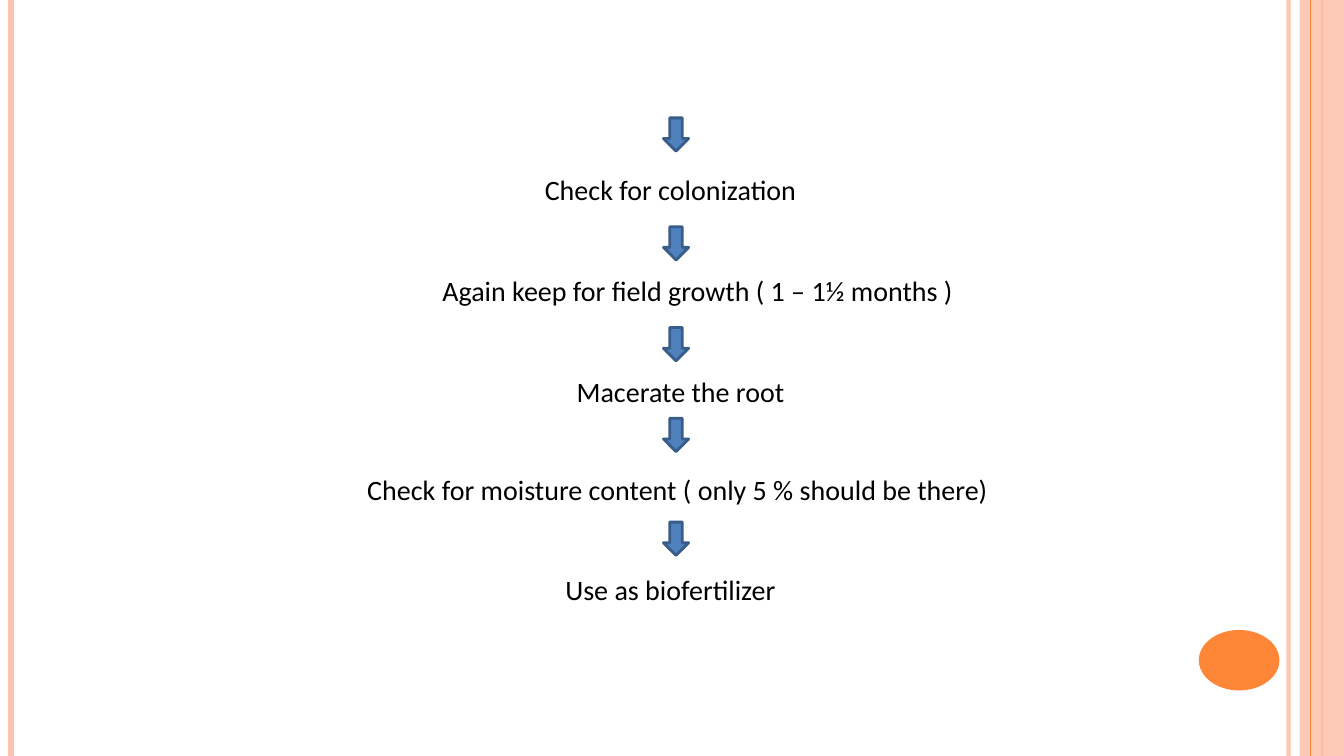
import lxml.etree
import pptx
import pptx.dml.color
import pptx.enum.shapes
import pptx.enum.text
import pptx.oxml.ns
import pptx.util

Inches = pptx.util.Inches
Pt = pptx.util.Pt
qn = pptx.oxml.ns.qn
SHAPE = pptx.enum.shapes.MSO_SHAPE

SLIDE_WIDTH, SLIDE_HEIGHT = 13.33, 7.5
COLORS = {
    "peach": "FEC3AE",
    "orange": "FE8637",
    "arrow": "4F81BC",
    "arrow_edge": "385D89",
    "text": "000000",
}
STEPS = [
    ("Check for colonization", 6.65, 1.88),
    ("Again keep for field growth ( 1 – 1½ months )", 6.92, 2.88),
    ("Macerate the root", 6.75, 3.88),
    ("Check for moisture content ( only 5 % should be there)", 6.72, 4.85),
    ("Use as biofertilizer", 6.65, 5.85),
]
ARROW_TOPS = [1.17, 2.25, 3.25, 4.15, 5.18]


def paint(color_format, name, opacity=100):
    """Give a solid fill a named colour and an opacity in percent."""
    color_format.solid()
    color_format.fore_color.rgb = pptx.dml.color.RGBColor.from_string(COLORS[name])
    if opacity < 100:
        for color in color_format._xPr.iter(qn("a:srgbClr")):
            alpha = lxml.etree.SubElement(color, qn("a:alpha"))
            alpha.set("val", str(opacity * 1000))


def add_stripe(slide, x, top, height, color, width, opacity=100):
    """Draw one vertical border line."""
    stripe = slide.shapes.add_connector(
        pptx.enum.shapes.MSO_CONNECTOR.STRAIGHT,
        Inches(x), Inches(top), Inches(x), Inches(top + height))
    paint(stripe.line.fill, color, opacity)
    stripe.line.width = Pt(width)
    lxml.etree.SubElement(stripe._element.spPr, qn("a:effectLst"))


def add_solid(slide, preset, box, color, opacity=100, edge=None):
    """Draw a filled preset shape, outlined only if an edge colour is given."""
    solid = slide.shapes.add_shape(preset, *map(Inches, box))
    solid.shadow.inherit = False
    paint(solid.fill, color, opacity)
    if edge:
        paint(solid.line.fill, edge)
        solid.line.width = Pt(2)
    else:
        solid.line.fill.background()


def add_border(slide, left, top, width, height):
    """Draw the side stripes, right band and number badge around the slide."""
    right = left + width
    add_stripe(slide, right - 0.55, top, height, "peach", 3, 93)
    add_stripe(slide, left + 0.11, top, height, "peach", 4.5)
    add_stripe(slide, right - 0.22, top, height, "orange", 1.5)
    add_solid(slide, SHAPE.RECTANGLE, (right - 0.44, top, 0.44, height), "peach", 87)
    add_stripe(slide, right - 0.33, top, height, "orange", 0.75)
    add_solid(slide, SHAPE.OVAL, (right - 1.44, top + height - 1.25, 0.8, 0.6), "orange")


def add_step(slide, wording, left, top, width, height):
    """Write one centred process step in its box."""
    step = slide.shapes.add_textbox(*map(Inches, (left, top, width, height)))
    frame = step.text_frame
    frame.text = wording
    frame.word_wrap = True
    frame.margin_left = frame.margin_right = frame.margin_top = frame.margin_bottom = 0
    frame.vertical_anchor = pptx.enum.text.MSO_ANCHOR.MIDDLE
    paragraph = frame.paragraphs[0]
    paragraph.alignment = pptx.enum.text.PP_ALIGN.CENTER
    font = paragraph.runs[0].font
    font.name = "Calibri"
    font.size = Pt(20)
    font.color.rgb = pptx.dml.color.RGBColor.from_string(COLORS["text"])


def add_process(slide, left, top):
    """Lay out the steps and the down arrows leading to them."""
    step_width, step_height = 6.6, 0.34
    for (wording, center, middle), arrow_top in zip(STEPS, ARROW_TOPS):
        add_solid(slide, SHAPE.DOWN_ARROW, (left + 6.58, top + arrow_top, 0.25, 0.33),
                  "arrow", edge="arrow_edge")
        add_step(slide, wording, left + center - step_width / 2,
                 top + middle - step_height / 2, step_width, step_height)


def main():
    """Build and save the slide."""
    deck = pptx.Presentation()
    deck.slide_width, deck.slide_height = Inches(SLIDE_WIDTH), Inches(SLIDE_HEIGHT)
    slide = deck.slides.add_slide(deck.slide_layouts[6])
    add_border(slide, 0, 0, SLIDE_WIDTH, SLIDE_HEIGHT)
    add_process(slide, 0, 0)
    deck.save("out.pptx")


if __name__ == "__main__":
    main()
